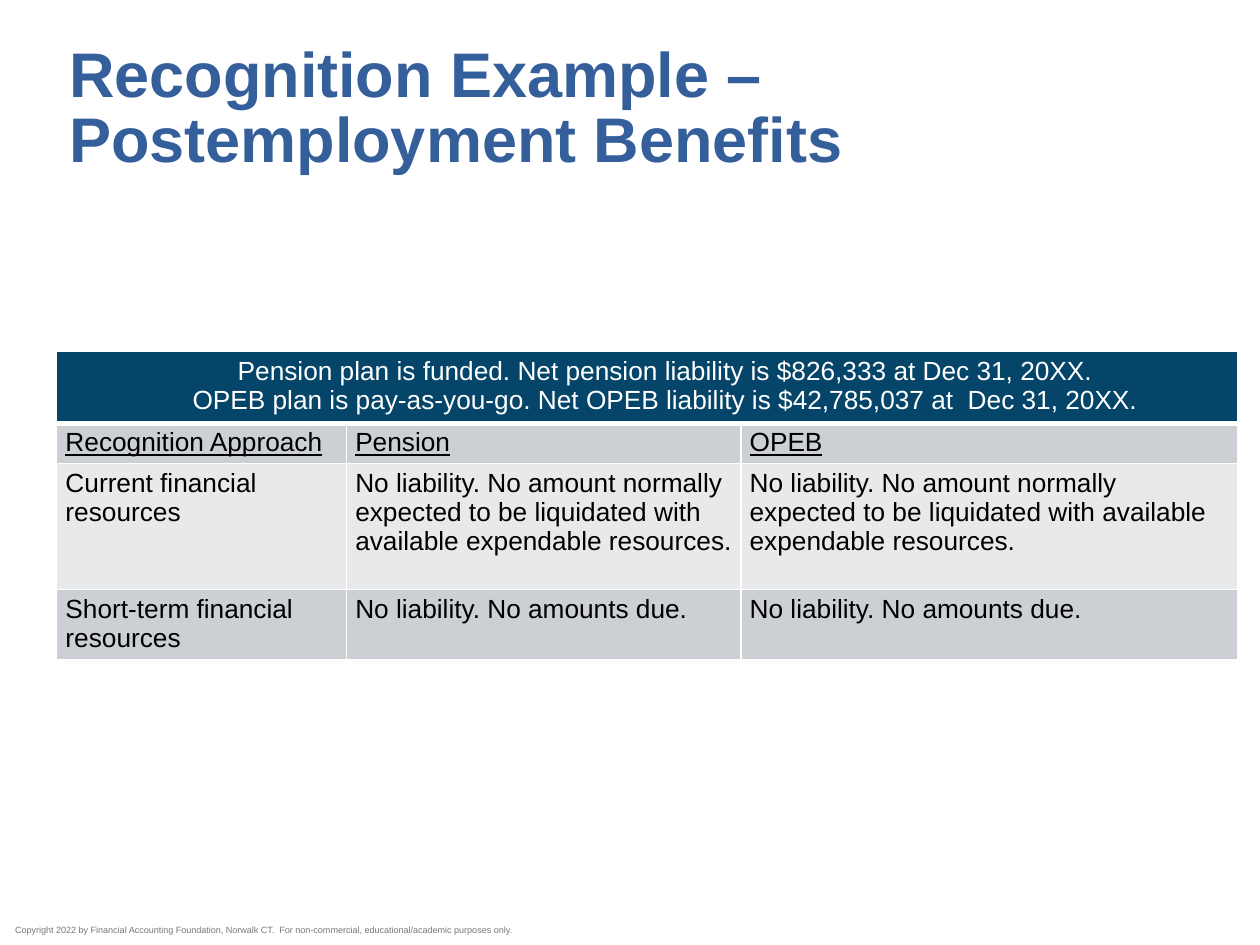
import pptx
import pptx.dml.color
import pptx.enum.text
import pptx.oxml
import pptx.oxml.ns
import pptx.util
from pptx.util import Inches

COLORS = {
    "title": "355F9A",
    "copyright": "78797B",
    "header": "054569",
    "odd_row": "CCCFD4",
    "even_row": "E7E9EB",
    "white": "FFFFFF",
    "black": "000000",
}


def rgb(name):
    return pptx.dml.color.RGBColor.from_string(COLORS[name])


class SlideBuilder:
    font_name = "Arial"
    cell_size = 15
    cell_spacing = 16.6

    def __init__(self, slide):
        self.slide = slide

    def format_text(self, frame, size, color, bold=False, underline=False, spacing=None):
        for paragraph in frame.paragraphs:
            if spacing:
                paragraph.line_spacing = pptx.util.Pt(spacing)
            for run in paragraph.runs:
                run.font.name = self.font_name
                run.font.size = pptx.util.Pt(size)
                run.font.bold = bold
                run.font.underline = underline
                run.font.color.rgb = rgb(color)

    def text(self, words, box, size, color, anchor="TOP", **style):
        frame = self.slide.shapes.add_textbox(*map(Inches, box)).text_frame
        frame.word_wrap = True
        frame.margin_left = frame.margin_right = 0
        frame.margin_top = frame.margin_bottom = 0
        frame.vertical_anchor = getattr(pptx.enum.text.MSO_ANCHOR, anchor)
        frame.text = words
        self.format_text(frame, size, color, **style)

    def border(self, cell, bottom):
        properties = cell._tc.get_or_add_tcPr()
        for index, side in enumerate("LRTB"):
            width = pptx.util.Pt(bottom if side == "B" else 1)
            line = pptx.oxml.parse_xml(
                f'<a:ln{side} {pptx.oxml.ns.nsdecls("a")} w="{width}"><a:solidFill>'
                f'<a:srgbClr val="{COLORS["white"]}"/></a:solidFill></a:ln{side}>'
            )
            properties.insert(index, line)

    def cell(self, cell, words, fill, color="black", underline=False, bottom=1):
        cell.text = words
        cell.margin_left = cell.margin_right = Inches(0.07)
        cell.margin_top = cell.margin_bottom = Inches(0.04)
        cell.fill.solid()
        cell.fill.fore_color.rgb = rgb(fill)
        self.border(cell, bottom)
        self.format_text(cell.text_frame, self.cell_size, color,
                         underline=underline, spacing=self.cell_spacing)

    def table(self, heading, rows, left, top, widths, heights):
        table = self.slide.shapes.add_table(
            len(heights), len(widths), Inches(left), Inches(top),
            Inches(sum(widths)), Inches(sum(heights))).table
        for column, width in zip(table.columns, widths):
            column.width = Inches(width)
        for row, height in zip(table.rows, heights):
            row.height = Inches(height)
        header = table.cell(0, 0)
        header.merge(table.cell(0, len(widths) - 1))
        self.cell(header, heading, "header", "white", bottom=3)
        for paragraph in header.text_frame.paragraphs:
            paragraph.alignment = pptx.enum.text.PP_ALIGN.CENTER
            paragraph._p.get_or_add_pPr().set("marL", str(Inches(0.29)))
        for row_index, row in enumerate(rows, 1):
            fill = "odd_row" if row_index % 2 else "even_row"
            for column_index, words in enumerate(row):
                self.cell(table.cell(row_index, column_index), words, fill,
                          underline=row_index == 1)


def main():
    presentation = pptx.Presentation()
    presentation.slide_width = Inches(10)
    presentation.slide_height = Inches(7.5)
    builder = SlideBuilder(presentation.slides.add_slide(presentation.slide_layouts[6]))

    builder.text(
        "Copyright 2022 by Financial Accounting Foundation, Norwalk CT.  "
        "For non-commercial, educational/academic purposes only.",
        (0.12, 7.34, 5.43, 0.14), 5.2, "copyright")
    builder.text("Recognition Example – Postemployment Benefits",
                 (0.55, 0.53, 8.5, 0.86), 36, "title",
                 anchor="BOTTOM", bold=True, spacing=37)

    not_expected = ("No liability. No amount normally expected to be liquidated "
                    "with available expendable resources.")
    none_due = "No liability. No amounts due."
    builder.table(
        "Pension plan is funded. Net pension liability is $826,333 at Dec 31, 20XX.\n"
        "OPEB plan is pay-as-you-go. Net OPEB liability is $42,785,037 at  Dec 31, 20XX.",
        [
            ("Recognition Approach", "Pension", "OPEB"),
            ("Current financial resources", not_expected, not_expected),
            ("Short-term financial resources", none_due, none_due),
        ],
        0.45, 2.79, (2.3, 3.13, 3.94), (0.57, 0.32, 1, 0.56))

    presentation.save("out.pptx")


if __name__ == "__main__":
    main()
